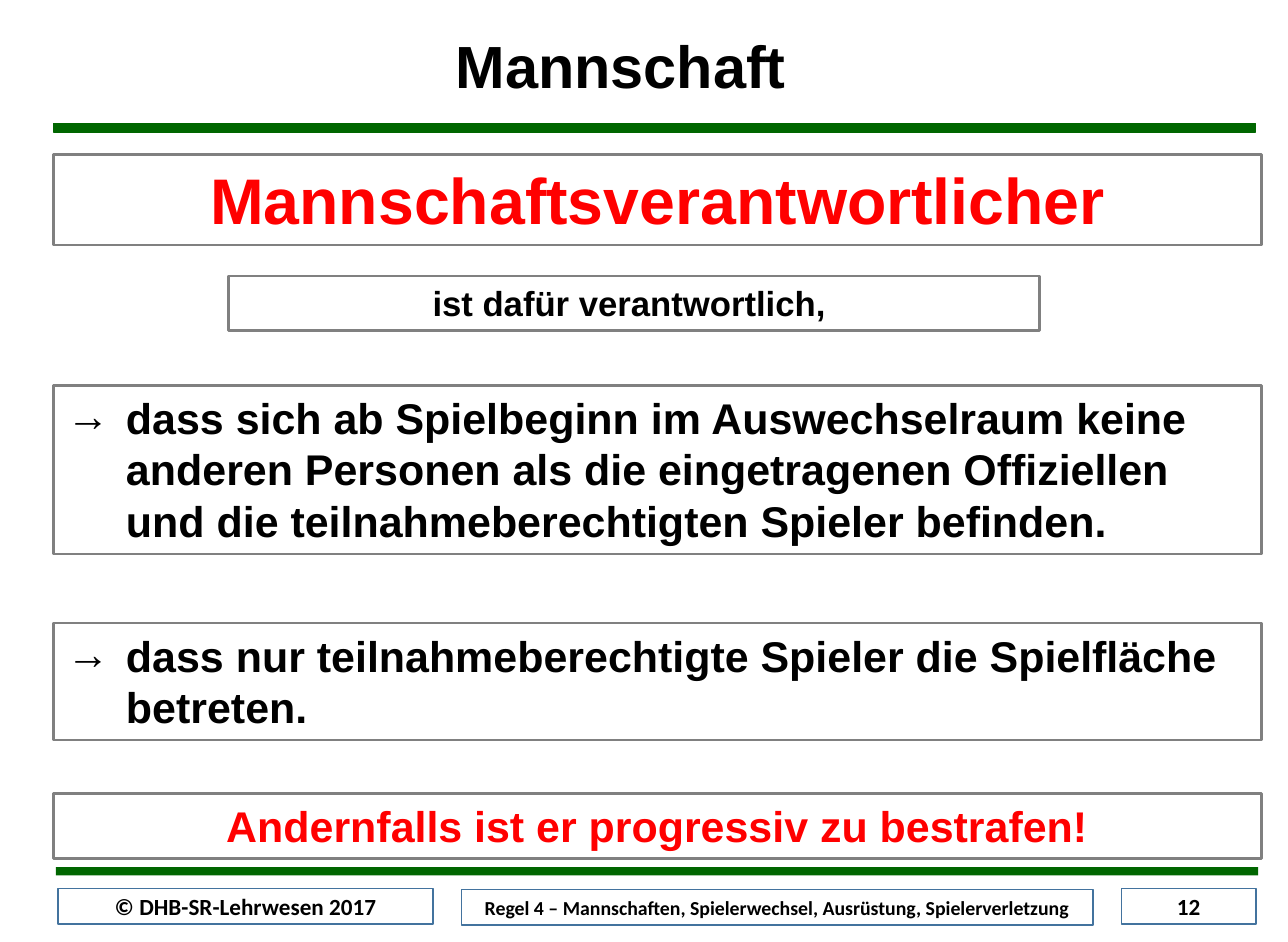
from pptx import Presentation
from pptx.dml.color import RGBColor
from pptx.enum.shapes import MSO_SHAPE
from pptx.enum.text import MSO_ANCHOR, PP_ALIGN
from pptx.util import Inches, Pt
from lxml.etree import SubElement
from pptx.oxml.ns import qn

BLACK, RED, GREEN, GRAY, BLUE, WHITE = "000000", "FF0000", "006600", "808080", "43739E", "FFFFFF"
LEFT, WIDTH = 0.45, 10.16

deck = Presentation()
deck.slide_width, deck.slide_height = Inches(10.83), Inches(7.92)
page = deck.slides.add_slide(deck.slide_layouts[6])


def add_box(place, fill=None, line=None, weight=1):
    box = page.shapes.add_shape(MSO_SHAPE.RECTANGLE, *map(Inches, place))
    box.shadow.inherit = False
    if fill:
        box.fill.solid()
        box.fill.fore_color.rgb = RGBColor.from_string(fill)
    else:
        box.fill.background()
    if line:
        box.line.color.rgb = RGBColor.from_string(line)
        box.line.width = Pt(weight)
    else:
        box.line.fill.background()
    return box


def write(box, text, font, size, color=BLACK, anchor=MSO_ANCHOR.TOP, side=0.11):
    frame = box.text_frame
    frame.word_wrap = True
    frame.vertical_anchor = anchor
    frame.margin_left = frame.margin_right = Inches(side)
    frame.margin_top = frame.margin_bottom = Inches(0.05)
    frame.text = text
    para = frame.paragraphs[0]
    para.alignment = PP_ALIGN.CENTER
    span = para.runs[0].font
    span.name, span.size, span.bold = font, Pt(size), True
    span.color.rgb = RGBColor.from_string(color)
    return para


add_box((LEFT, 1.04, 10.11, 0.07), GREEN, GREEN, 0.75)
add_box((0.47, 7.29, 10.11, 0.07), GREEN)

footers = [
    (0.49, 7.47, 3.15, "© DHB-SR-Lehrwesen 2017", 14),
    (9.43, 7.47, 1.13, "12", 14),
    (3.88, 7.48, 5.31, "Regel 4 – Mannschaften, Spielerwechsel, Ausrüstung, Spielerverletzung", 12),
]
for left, top, width, text, size in footers:
    footer = add_box((left, top, width, 0.3), WHITE, BLUE)
    write(footer, text, "Calibri", size, anchor=MSO_ANCHOR.MIDDLE, side=0.1)

statements = [
    (LEFT, 1.3, WIDTH, 0.76, "Mannschaftsverantwortlicher", 39, RED, False),
    (1.92, 2.32, 6.82, 0.46, "ist dafür verantwortlich, ", 21, BLACK, False),
    (LEFT, 3.24, WIDTH, 1.42, "dass sich ab Spielbeginn im Auswechselraum keine anderen Personen als "
     "die eingetragenen Offiziellen und die teilnahmeberechtigten Spieler befinden.", 26, BLACK, True),
    (LEFT, 5.24, WIDTH, 0.98, "dass nur teilnahmeberechtigte Spieler die Spielfläche betreten.", 26, BLACK, True),
    (LEFT, 6.67, WIDTH, 0.55, "Andernfalls ist er progressiv zu bestrafen!", 26, RED, False),
]
for left, top, width, height, text, size, color, arrow in statements:
    statement = add_box((left, top, width, height), line=GRAY, weight=1.5)
    para = write(statement, text, "Arial", size, color)
    if arrow:
        para.alignment = PP_ALIGN.LEFT
        layout = para._p.get_or_add_pPr()
        layout.set("marL", str(Inches(0.5)))
        layout.set("indent", str(-Inches(0.5)))
        SubElement(layout, qn("a:buFont")).set("typeface", "Arial")
        SubElement(layout, qn("a:buChar")).set("char", "→")

title = page.shapes.add_textbox(*map(Inches, (3.37, 0.26, 3.7, 0.63)))
write(title, "Mannschaft", "Arial", 36, side=0.1).line_spacing = 0.9

deck.save("out.pptx")
